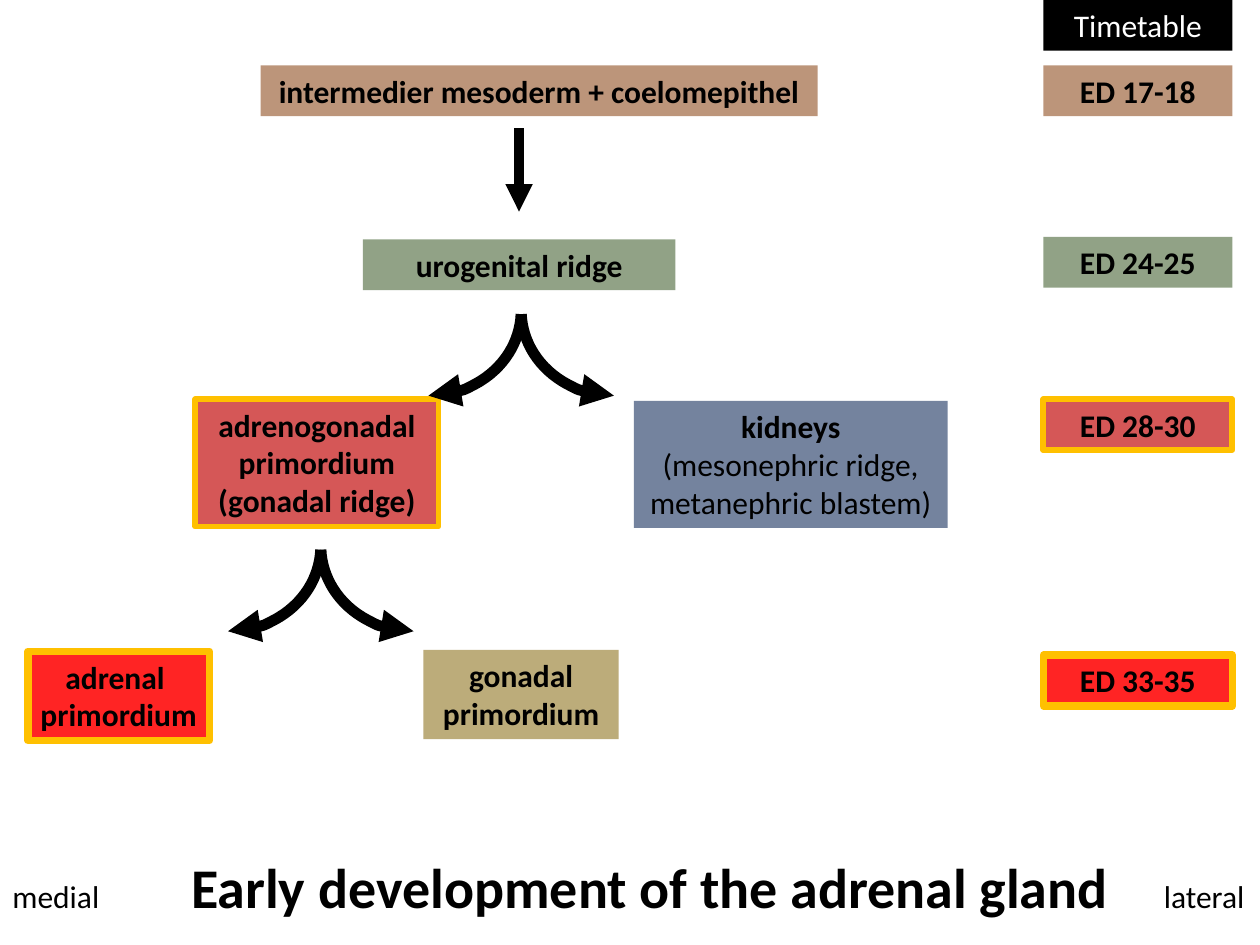
from dataclasses import dataclass

from lxml.etree import SubElement
from pptx import Presentation
from pptx.dml.color import RGBColor
from pptx.enum.shapes import MSO_CONNECTOR, MSO_SHAPE
from pptx.enum.text import MSO_ANCHOR, PP_ALIGN
from pptx.oxml.ns import qn
from pptx.util import Pt


@dataclass(frozen=True)
class Stage:
    fill: str
    opacity: int = 100
    border: float = 0
    ink: str = "000000"


@dataclass(frozen=True)
class Theme:
    font: str = "Calibri"
    ink: str = "000000"
    border: str = "FFC000"
    body: int = 18
    title: int = 32
    row: float = 29
    header: Stage = Stage("000000", ink="FFFFFF")
    mesoderm: Stage = Stage("843C0B", 54)
    ridge: Stage = Stage("385723", 55)
    kidneys: Stage = Stage("203864", 62)
    adrenogonadal: Stage = Stage("C00000", 66, 3.25)
    adrenal: Stage = Stage("FF0000", 86, 4.25)
    gonadal: Stage = Stage("806000", 52)


THEME = Theme()


def write(frame, lines, align=PP_ALIGN.CENTER, size=THEME.body, ink=THEME.ink):
    """Write (text, bold) lines, one paragraph each."""
    frame.word_wrap = True
    frame.vertical_anchor = MSO_ANCHOR.TOP
    for index, (text, bold) in enumerate(lines):
        paragraph = frame.add_paragraph() if index else frame.paragraphs[0]
        paragraph.text = text
        paragraph.alignment = align
        formats = {"name": THEME.font, "size": Pt(size), "bold": bold}
        for run in paragraph.runs:
            for key, value in formats.items():
                setattr(run.font, key, value)
            run.font.color.rgb = RGBColor.from_string(ink)


def add_stage(slide, box, stage, lines):
    block = slide.shapes.add_shape(MSO_SHAPE.RECTANGLE, *map(Pt, box))
    block.shadow.inherit = False
    block.fill.solid()
    block.fill.fore_color.rgb = RGBColor.from_string(stage.fill)
    if stage.opacity < 100:
        color = block.fill._xPr.find(qn("a:solidFill"))[0]
        SubElement(color, qn("a:alpha"), val=str(stage.opacity * 1000))
    if stage.border:
        block.line.width = Pt(stage.border)
        block.line.color.rgb = RGBColor.from_string(THEME.border)
    else:
        block.line.fill.background()
    write(block.text_frame, lines, ink=stage.ink)


def style_arrow(arrow, width, end):
    arrow.line.width = Pt(width)
    arrow.line.color.rgb = RGBColor.from_string(THEME.ink)
    SubElement(arrow.line._get_or_add_ln(), qn(f"a:{end}"), type="triangle")


def add_branch(slide, apex, top):
    """Two curved arrows that part at the apex."""
    width, height = 106, 97.2
    for left, mirrored in ((apex - width, True), (apex, False)):
        arc = slide.shapes.add_shape(
            MSO_SHAPE.ARC, Pt(left), Pt(top), Pt(width), Pt(height))
        arc.shadow.inherit = False
        arc.rotation = 180
        arc.adjustments[0] = 162
        arc.adjustments[1] = 214.69
        arc.fill.background()
        if mirrored:
            arc._element.spPr.find(qn("a:xfrm")).set("flipH", "1")
        style_arrow(arc, 6.25, "headEnd")


def add_lineage(slide, left, top):
    # Tissues, from the mesoderm down to the primordia
    tissues = (
        ((133, 0, 318.2, THEME.row), THEME.mesoderm,
         [("intermedier mesoderm + coelomepithel", True)]),
        ((191.4, 99.4, 178.6, THEME.row), THEME.ridge,
         [("urogenital ridge", True)]),
        ((346.2, 191.6, 179.3, 72.7), THEME.kidneys,
         [("kidneys", True),
          ("(mesonephric ridge, metanephric blastem)", False)]),
        ((95.6, 190.8, 139, 72.7), THEME.adrenogonadal,
         [("adrenogonadal primordium\v(gonadal ridge)", True)]),
        ((0, 334.8, 103.7, 51), THEME.adrenal,
         [("adrenal ", True), ("primordium", True)]),
        ((226, 334, 111.6, 51), THEME.gonadal,
         [("gonadal", True), ("primordium", True)]),
    )
    for (x, y, width, height), stage, lines in tissues:
        add_stage(slide, (left + x, top + y, width, height), stage, lines)

    # Straight arrow, then the two branchings
    stem = slide.shapes.add_connector(
        MSO_CONNECTOR.STRAIGHT, Pt(left + 280.6), Pt(top + 36),
        Pt(left + 280.6), Pt(top + 83.5))
    style_arrow(stem, 5.25, "tailEnd")
    SubElement(stem._element.spPr, qn("a:effectLst"))
    for apex, y in ((281.8, 91.5), (167.3, 226.1)):
        add_branch(slide, left + apex, top + y)


def add_timetable(slide, left, top, width):
    rows = (
        (0, THEME.header, "Timetable", False),
        (37.4, THEME.mesoderm, "ED 17-18", True),
        (135.4, THEME.ridge, "ED 24-25", True),
        (228.2, THEME.adrenogonadal, "ED 28-30", True),
        (374.4, THEME.adrenal, "ED 33-35", True),
    )
    for y, stage, days, bold in rows:
        add_stage(slide, (left, top + y, width, THEME.row), stage,
                  [(days, bold)])


def add_footer(slide, left, top):
    captions = (
        (0, 13.7, 65, THEME.row, "medial", THEME.body, False),
        (658, 13.7, 72, THEME.row, "lateral", THEME.body, False),
        (102.2, 0, 568, 46, "Early development of the adrenal gland",
         THEME.title, True),
    )
    for x, y, width, height, text, size, bold in captions:
        caption = slide.shapes.add_textbox(
            Pt(left + x), Pt(top + y), Pt(width), Pt(height))
        write(caption.text_frame, [(text, bold)], PP_ALIGN.LEFT, size)


def main():
    deck = Presentation()
    deck.slide_width, deck.slide_height = Pt(720), Pt(540)
    slide = deck.slides.add_slide(deck.slide_layouts[6])
    add_lineage(slide, 16, 37.4)
    add_timetable(slide, 596.2, 0, 108)
    add_footer(slide, 0, 483.8)
    deck.save("out.pptx")


if __name__ == "__main__":
    main()
